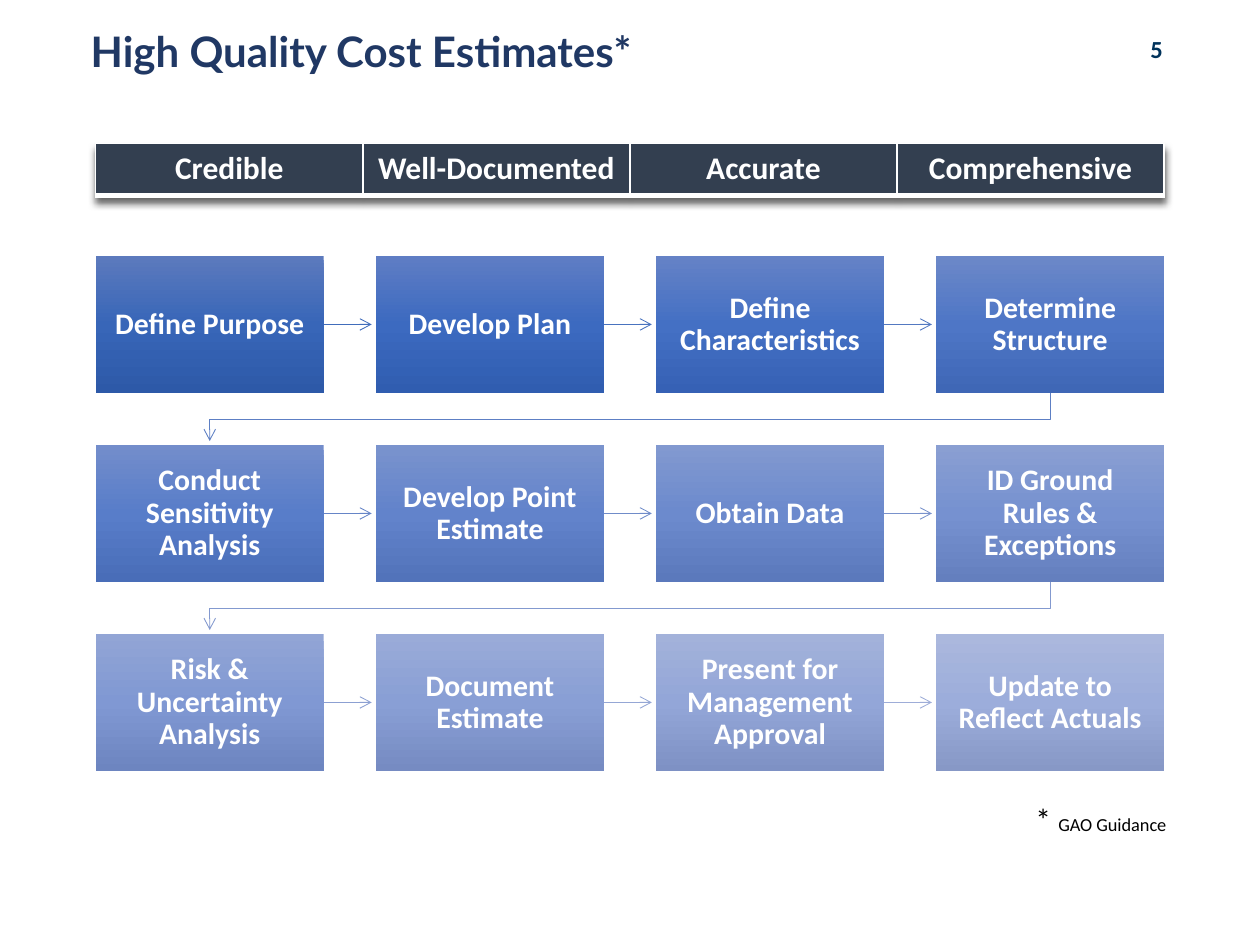
from copy import deepcopy

from lxml import etree
from pptx import Presentation
from pptx.dml.color import RGBColor
from pptx.enum.shapes import MSO_CONNECTOR, MSO_SHAPE
from pptx.enum.text import MSO_ANCHOR, PP_ALIGN
from pptx.oxml import parse_xml
from pptx.oxml.ns import nsdecls, qn
from pptx.util import Inches, Pt

RECT = MSO_SHAPE.RECTANGLE
STRAIGHT = MSO_CONNECTOR.STRAIGHT
MIDDLE = MSO_ANCHOR.MIDDLE
LEFT, CENTER = PP_ALIGN.LEFT, PP_ALIGN.CENTER

WHITE = RGBColor(0xFF, 0xFF, 0xFF)
BLACK = RGBColor(0, 0, 0)
NAVY = RGBColor(0x20, 0x38, 0x64)
TEAL = RGBColor(0x00, 0x33, 0x5B)
SLATE = RGBColor(0x33, 0x3F, 0x50)

COLS = 4
X, Y = 0.76, 2.03
BOX_W, BOX_H = 1.81, 1.09
WIDTH = 8.48
STEP_X = (WIDTH - BOX_W) / (COLS - 1)
STEP_Y = 1.5
ARROW = 0.38

TITLE = {"name": "Lato", "size": Pt(24), "bold": True}
NUMBER = {"name": "Calibri", "size": Pt(14), "bold": True}
HEAD = {"name": "Calibri", "size": Pt(18), "bold": True}
LABEL = {"name": "Calibri", "size": Pt(17), "bold": True}
STAR = {"name": "Calibri", "size": Pt(18)}
NOTE = {"name": "Calibri", "size": Pt(10.5)}

TRAITS = ["Credible", "Well-Documented", "Accurate", "Comprehensive"]
STEPS = [
    ("Define Purpose", "5C7ABD 3866B8 2D59A8", "416DBB"),
    ("Develop Plan", "5F7DC4 3C6AC0 305DB0", "4973BF"),
    ("Define Characteristics", "6582C6 4470C4 3661B5", "5379C1"),
    ("Determine Structure", "6C88C8 4E76C6 3F67B6", "5D7FC4"),
    ("Conduct Sensitivity Analysis", "738DCB 587DC9 496DB8", "6685C7"),
    ("Develop Point Estimate", "7A93CD 6283CB 5273BA", "708CC9"),
    ("Obtain Data", "8299D0 6C8ACD 5B79BC", "7992CC"),
    ("ID Ground Rules & Exceptions", "8A9FD2 7691D0 647FBE", "8399CF"),
    ("Risk & Uncertainty Analysis", "92A5D5 8098D3 6D85C0", "8CA0D2"),
    ("Document Estimate", "9AABD8 899FD5 768BC2", "95A7D5"),
    ("Present for Management Approval", "A3B2DA 93A6D8 7E91C4", "9EADD8"),
    ("Update to Reflect Actuals", "ABB8DD 9CADDB 8798C6", None),
]


def put(item, values):
    for name, value in values.items():
        setattr(item, name, value)


def write(para, text, form, color, align=LEFT):
    para.alignment = align
    run = para.add_run()
    run.text = text
    put(run.font, form)
    run.font.color.rgb = color


def add_title(slide, text):
    title = slide.shapes.title
    put(title, {"left": Inches(0.62), "top": Inches(0.23),
                "width": Inches(8.26), "height": Inches(0.39)})
    title.text_frame.vertical_anchor = MIDDLE
    para = title.text_frame.paragraphs[0]
    para.line_spacing = 0.9
    write(para, text, TITLE, NAVY)


def add_text(slide, x, y, w, h, parts, color, align=LEFT):
    box = slide.shapes.add_textbox(Inches(x), Inches(y), Inches(w), Inches(h))
    box.text_frame.word_wrap = True
    for text, form in parts:
        write(box.text_frame.paragraphs[0], text, form, color, align)


def add_border(cell):
    props = cell._tc.get_or_add_tcPr()
    for at, (side, width) in enumerate([("L", 1), ("R", 1), ("T", 1), ("B", 3)]):
        props.insert(at, parse_xml(
            f'<a:ln{side} {nsdecls("a")} w="{Pt(width)}"><a:solidFill>'
            f'<a:srgbClr val="{WHITE}"/></a:solidFill></a:ln{side}>'))


def add_table(slide):
    frame = slide.shapes.add_table(
        1, COLS, Inches(X), Inches(1.14), Inches(WIDTH), Inches(0.41))
    for cell, text in zip(frame.table.rows[0].cells, TRAITS):
        cell.fill.solid()
        cell.fill.fore_color.rgb = SLATE
        write(cell.text_frame.paragraphs[0], text, HEAD, WHITE, CENTER)
        add_border(cell)
    frame.table._tbl.tblPr.insert(0, parse_xml(
        f'<a:effectLst {nsdecls("a")}><a:outerShdw blurRad="50800" dist="38100" '
        'dir="5400000" algn="t" rotWithShape="0"><a:prstClr val="black">'
        '<a:alpha val="60000"/></a:prstClr></a:outerShdw></a:effectLst>'))


def shade(shape, colors):
    shape.fill.gradient()
    shape.fill.gradient_angle = 270
    stops = shape._element.spPr.find(qn("a:gradFill")).find(qn("a:gsLst"))
    stops.append(deepcopy(stops[0]))
    for at, (stop, color) in enumerate(zip(shape.fill.gradient_stops, colors.split())):
        stop.position = at / 2
        stop.color.rgb = RGBColor.from_string(color)


def add_box(slide, x, y, text, colors):
    box = slide.shapes.add_shape(
        RECT, Inches(x), Inches(y), Inches(BOX_W), Inches(BOX_H))
    box.shadow.inherit = False
    box.line.fill.background()
    shade(box, colors)
    frame = box.text_frame
    put(frame, {"word_wrap": True, "vertical_anchor": MIDDLE})
    put(frame, {f"margin_{side}": Inches(0.13)
                for side in ("left", "right", "top", "bottom")})
    frame.paragraphs[0].line_spacing = 0.9
    write(frame.paragraphs[0], text, LABEL, WHITE, CENTER)


def ink(shape, color):
    shape.line.width = Pt(0.5)
    shape.line.color.rgb = RGBColor.from_string(color)
    line = shape.line._get_or_add_ln()
    etree.SubElement(line, qn("a:tailEnd"), type="arrow")


def add_arrow(slide, x, y, color):
    link = slide.shapes.add_connector(
        STRAIGHT, Inches(x), Inches(y), Inches(x + ARROW), Inches(y))
    ink(link, color)
    etree.SubElement(link._element.spPr, qn("a:effectLst"))


def add_turn(slide, y, color):
    start, end = X + WIDTH - BOX_W / 2, X + BOX_W / 2
    points = [(start, y + 0.21), (end, y + 0.21), (end, y + ARROW)]
    path = slide.shapes.build_freeform(Inches(start), Inches(y))
    path.add_line_segments([(Inches(a), Inches(b)) for a, b in points], close=False)
    turn = path.convert_to_shape()
    turn.shadow.inherit = False
    turn.fill.background()
    ink(turn, color)


def add_flow(slide):
    for at, (text, colors, line) in enumerate(STEPS):
        row, col = divmod(at, COLS)
        x, y = X + col * STEP_X, Y + row * STEP_Y
        add_box(slide, x, y, text, colors)
        if col < COLS - 1:
            add_arrow(slide, x + BOX_W, y + BOX_H / 2, line)
        elif line:
            add_turn(slide, y + BOX_H, line)


def main():
    deck = Presentation()
    put(deck, {"slide_width": Inches(10), "slide_height": Inches(7.5)})
    slide = deck.slides.add_slide(deck.slide_layouts[5])
    add_title(slide, "High Quality Cost Estimates*")
    add_text(slide, 8.96, 0.22, 0.44, 0.34, [("5", NUMBER)], TEAL, CENTER)
    add_table(slide)
    add_flow(slide)
    add_text(slide, 8.12, 6.3, 1.53, 0.4,
             [("* ", STAR), ("GAO Guidance", NOTE)], BLACK)
    deck.save("out.pptx")


if __name__ == "__main__":
    main()
